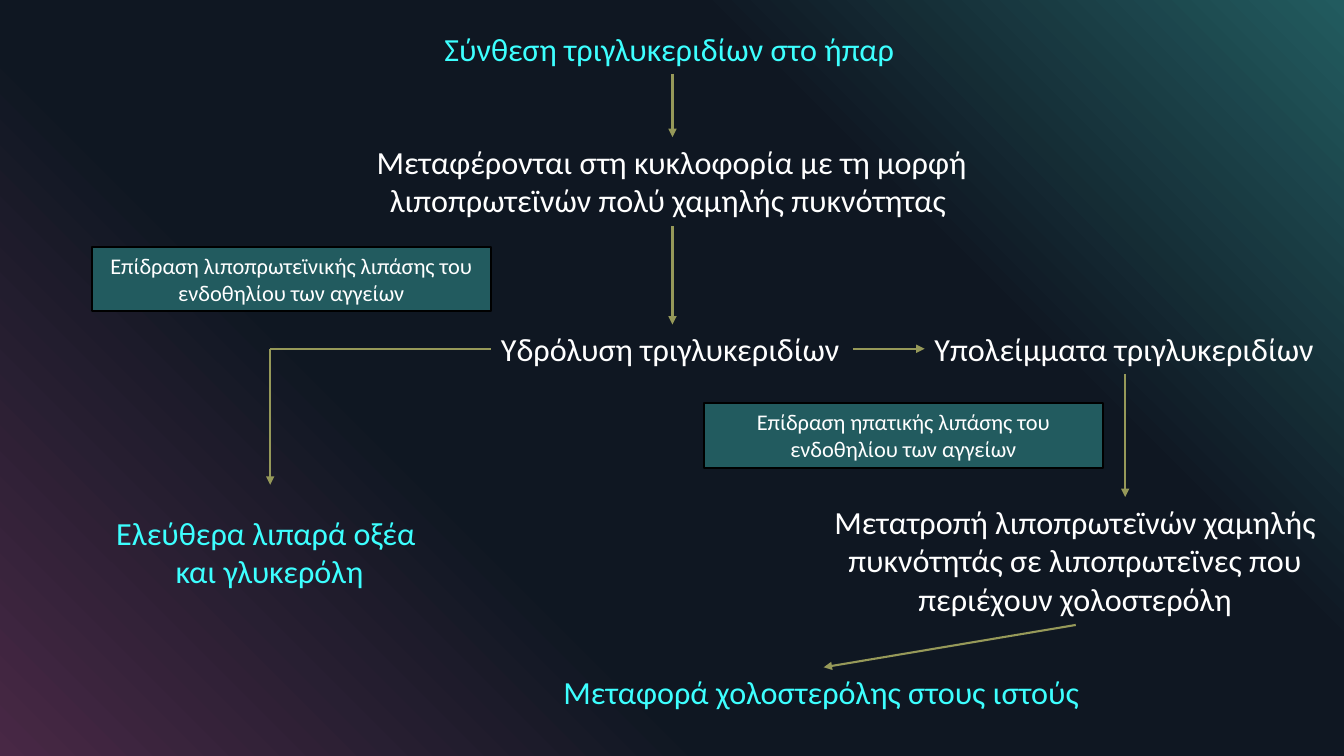
from copy import deepcopy
from lxml.etree import SubElement
from pptx import Presentation
from pptx.dml.color import RGBColor
from pptx.enum.shapes import MSO_CONNECTOR, MSO_SHAPE
from pptx.enum.text import MSO_ANCHOR, MSO_AUTO_SIZE, PP_ALIGN
from pptx.oxml.ns import qn
from pptx.util import Inches, Pt

BLACK = RGBColor(0x00, 0x00, 0x00)
WHITE = RGBColor(0xFF, 0xFF, 0xFF)
CYAN = RGBColor(0x3D, 0xFF, 0xFF)
OLIVE = RGBColor(0x96, 0x99, 0x59)
TEAL = RGBColor(0x22, 0x5B, 0x5F)
NAVY = RGBColor(0x0F, 0x17, 0x22)
PLUM = RGBColor(0x48, 0x28, 0x45)
FADE = [(0, PLUM), (0.34, NAVY), (0.69, NAVY), (1, TEAL)]

WIDE, HIGH = 13.33, 7.5
MID = 6.67
ROW = 3.46
LEFT = 2.68
RIGHT = 11.16


def add_back(slide):
    back = slide.shapes.add_shape(MSO_SHAPE.RECTANGLE, 0, 0, Inches(WIDE), Inches(HIGH))
    back.shadow.inherit = False
    back.line.fill.background()
    back.fill.gradient()
    back.fill.gradient_angle = 45
    stops = back._element.spPr.find(qn("a:gradFill")).find(qn("a:gsLst"))
    for _ in range(len(FADE) - len(stops)):
        stops.append(deepcopy(stops[0]))
    for stop, (place, color) in zip(back.fill.gradient_stops, FADE):
        stop.position = place
        stop.color.rgb = color


def set_text(shape, text, size, color, align, wrap):
    frame = shape.text_frame
    frame.text = text
    frame.word_wrap = wrap
    frame.auto_size = MSO_AUTO_SIZE.SHAPE_TO_FIT_TEXT
    frame.vertical_anchor = MSO_ANCHOR.TOP
    for para in frame.paragraphs:
        para.alignment = align
        para.font.name = "Calibri"
        para.font.size = Pt(size)
        para.font.color.rgb = color


def add_step(slide, box, text, color=WHITE, align=PP_ALIGN.CENTER, wrap=True):
    step = slide.shapes.add_textbox(*map(Inches, box))
    set_text(step, text, 23, color, align, wrap)


def add_label(slide, box, text, color=WHITE):
    add_step(slide, box, text, color, PP_ALIGN.LEFT, False)


def add_note(slide, left, top, text):
    note = slide.shapes.add_shape(
        MSO_SHAPE.RECTANGLE, Inches(left), Inches(top), Inches(3.96), Inches(0.64))
    note.shadow.inherit = False
    note.fill.solid()
    note.fill.fore_color.rgb = TEAL
    note.line.color.rgb = BLACK
    note.line.width = Pt(1.5)
    set_text(note, text, 16, WHITE, PP_ALIGN.CENTER, True)


def add_line(slide, start, end, head=True):
    link = slide.shapes.add_connector(MSO_CONNECTOR.STRAIGHT, *map(Inches, start + end))
    link.line.color.rgb = OLIVE
    link.line.width = Pt(1.5)
    if head:
        SubElement(link.line._get_or_add_ln(), qn("a:tailEnd"), type="triangle")
    SubElement(link._element.spPr, qn("a:effectLst"))


def main():
    deck = Presentation()
    deck.slide_width = Inches(WIDE)
    deck.slide_height = Inches(HIGH)
    slide = deck.slides.add_slide(deck.slide_layouts[6])
    add_back(slide)

    add_label(slide, (4.31, 0.24, 4.71, 0.49), "Σύνθεση τριγλυκεριδίων στο ήπαρ", CYAN)
    add_step(slide, (3.15, 1.36, 7.03, 0.88),
             "Μεταφέρονται στη κυκλοφορία με τη μορφή λιποπρωτεϊνών πολύ χαμηλής πυκνότητας ")
    add_label(slide, (4.87, 3.22, 3.59, 0.49), "Υδρόλυση τριγλυκεριδίων")
    add_label(slide, (9.17, 3.22, 4, 0.49), "Υπολείμματα τριγλυκεριδίων")
    add_step(slide, (1.04, 5.04, 3.27, 0.88),
             "Ελεύθερα λιπαρά οξέα \nκαι γλυκερόλη", CYAN, wrap=False)
    add_step(slide, (8.17, 4.93, 4.99, 1.26),
             "Μετατροπή λιποπρωτεϊνών χαμηλής πυκνότητάς σε λιποπρωτεϊνες "
             "που περιέχουν χολοστερόλη")
    add_label(slide, (5.49, 6.62, 5.37, 0.49), "Μεταφορά χολοστερόλης στους ιστούς", CYAN)

    add_note(slide, 0.91, 2.45, "Επίδραση λιποπρωτεϊνικής λιπάσης του ενδοθηλίου των αγγείων")
    add_note(slide, 6.98, 4, "Επίδραση ηπατικής λιπάσης του ενδοθηλίου των αγγείων")

    add_line(slide, (MID, 0.73), (MID, 1.36))
    add_line(slide, (MID, 2.24), (MID, 3.22))
    add_line(slide, (4.87, ROW), (LEFT, ROW), head=False)
    add_line(slide, (LEFT, ROW), (LEFT, 4.81))
    add_line(slide, (8.46, ROW), (9.17, ROW))
    add_line(slide, (RIGHT, 3.71), (RIGHT, 4.93))
    add_line(slide, (10.67, 6.2), (8.17, 6.62))

    deck.save("out.pptx")


if __name__ == "__main__":
    main()
